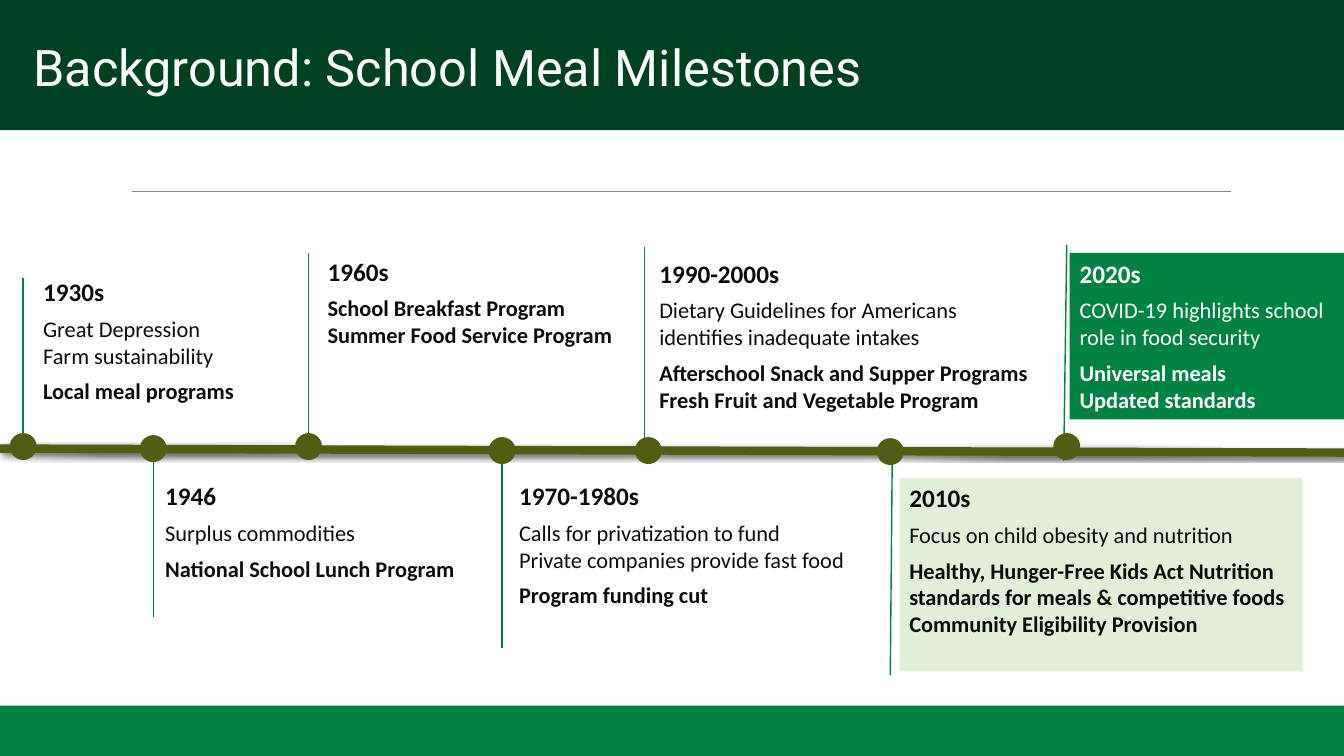
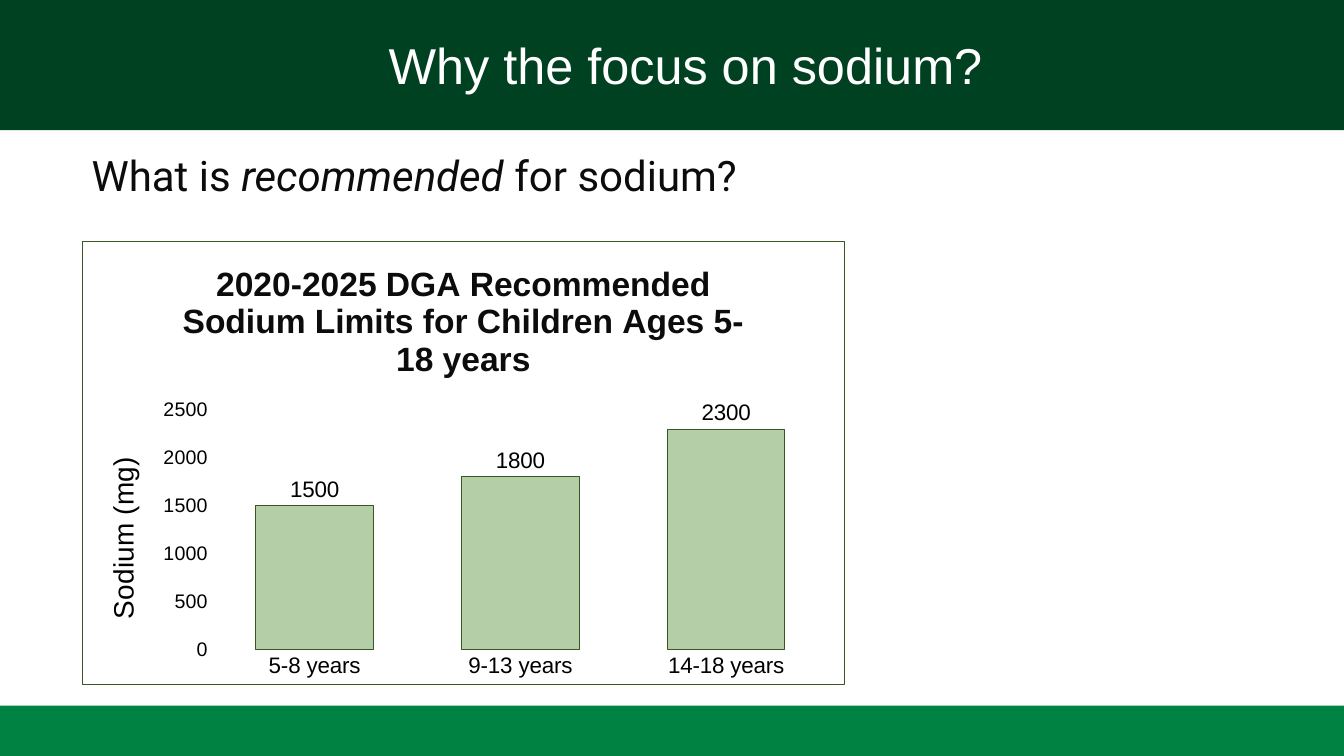
from dataclasses import dataclass

from lxml.etree import SubElement
from pptx import Presentation
from pptx.chart.data import CategoryChartData
from pptx.dml.color import RGBColor
from pptx.enum.chart import XL_CHART_TYPE, XL_LABEL_POSITION, XL_TICK_MARK
from pptx.enum.shapes import MSO_CONNECTOR, MSO_SHAPE
from pptx.enum.text import MSO_ANCHOR, MSO_AUTO_SIZE, PP_ALIGN
from pptx.oxml import parse_xml
from pptx.oxml.ns import nsdecls, qn
from pptx.util import Inches, Pt

GREEN, DARK_GREEN, PALE_GREEN, OLIVE = "008342", "004121", "E1EFD8", "535C13"
BAR, BAR_EDGE, GREY = "B4CFA8", "385723", "858585"
INK, BLACK, WHITE = "0C0C0C", "000000", "FFFFFF"
DOT = 0.25


@dataclass(frozen=True)
class Line:
    """A line of milestone text."""

    text: str
    bold: bool = False
    gap: int = 0


@dataclass(frozen=True)
class Milestone:
    """A dot on the timeline with its stem and text box."""

    period: str
    dot: tuple[float, float]
    stem: tuple[float, float, float, float]
    box: tuple[float, float, float, float]
    lines: tuple[Line, ...]
    fill: str = ""
    ink: str = INK


MILESTONES = (
    Milestone("1930s", (0.23, 4.43), (0.23, 2.76, 0.23, 4.43), (0.33, 2.69, 2.27, 1.38),
              (Line("Great Depression", gap=6), Line("Farm sustainability"),
               Line("Local meal programs", True, 6))),
    Milestone("1946", (1.52, 4.45), (1.52, 4.49, 1.52, 6.12), (1.54, 4.72, 3.57, 1.11),
              (Line("Surplus commodities", gap=6),
               Line("National School Lunch Program", True, 6))),
    Milestone("1960s", (3.06, 4.43), (3.06, 2.51, 3.06, 4.45), (3.15, 2.49, 3.39, 1.03),
              (Line("School Breakfast Program", True, 6),
               Line("Summer Food Service Program", True))),
    Milestone("1970-1980s", (4.98, 4.47), (4.98, 4.49, 4.98, 6.43), (5.05, 4.72, 3.87, 1.38),
              (Line("Calls for privatization to fund", gap=6),
               Line("Private companies provide fast food"),
               Line("Program funding cut", True, 6))),
    Milestone("1990-2000s", (6.43, 4.47), (6.39, 2.45, 6.39, 4.42), (6.44, 2.51, 4.02, 1.65),
              (Line("Dietary Guidelines for Americans identifies inadequate intakes", gap=6),
               Line("Afterschool Snack and Supper Programs", True, 6),
               Line("Fresh Fruit and Vegetable Program", True))),
    Milestone("2010s", (8.83, 4.48), (8.85, 4.46, 8.83, 6.7), (8.92, 4.74, 4, 1.92),
              (Line("Focus on child obesity and nutrition", gap=6),
               Line("Healthy, Hunger-Free Kids Act Nutrition standards for meals "
                    "& competitive foods", True, 6),
               Line("Community Eligibility Provision", True)), PALE_GREEN),
    Milestone("2020s", (10.58, 4.43), (10.58, 2.43, 10.55, 4.57), (10.61, 2.51, 2.74, 1.65),
              (Line("COVID-19 highlights school role in food security", gap=6),
               Line("Universal meals", True, 6), Line("Updated standards", True)),
              GREEN, WHITE),
)


def color(value: str) -> RGBColor:
    """Turn a hex string into a colour."""
    return RGBColor.from_string(value)


def style_font(font, name: str, size: float, ink: str, bold: bool = False) -> None:
    """Set the look of a font."""
    font.name, font.size, font.bold = name, Pt(size), bold
    font.color.rgb = color(ink)


def add_span(para, text: str, name: str, size: float, ink: str, bold: bool = False):
    """Add one formatted run to a paragraph."""
    span = para.add_run()
    span.text = text
    style_font(span.font, name, size, ink, bold)
    return span


def add_solid(page, shape: MSO_SHAPE, area: tuple[float, ...], fill: str):
    """Add a flat filled shape."""
    solid = page.shapes.add_shape(shape, *map(Inches, area))
    solid.shadow.inherit = False
    solid.fill.solid()
    solid.fill.fore_color.rgb = color(fill)
    solid.line.fill.background()
    return solid


def add_line(page, ends: tuple[float, ...], ink: str, width: float, shadow: bool = False) -> None:
    """Add a straight line, with a soft shadow on request."""
    line = page.shapes.add_connector(MSO_CONNECTOR.STRAIGHT, *map(Inches, ends))
    line.line.color.rgb = color(ink)
    line.line.width = Pt(width)
    effects = SubElement(line._element.spPr, qn("a:effectLst"))
    if shadow:
        outer = SubElement(effects, qn("a:outerShdw"), blurRad=str(Pt(3)), dist=str(Pt(2)),
                           dir="2700000", rotWithShape="0")
        tint = SubElement(outer, qn("a:srgbClr"), val=BLACK)
        SubElement(tint, qn("a:alpha"), val="60000")


def add_text_box(page, area: tuple[float, ...]):
    """Add a wrapping text box of fixed size."""
    box = page.shapes.add_textbox(*map(Inches, area))
    box.text_frame.word_wrap = True
    box.text_frame.auto_size = MSO_AUTO_SIZE.NONE
    return box


def add_bands(page) -> None:
    """Place the top and bottom bands on the layout of a page."""
    layout = page.slide_layout
    for holder in list(layout.placeholders)[1:]:
        holder._element.getparent().remove(holder._element)
    for area, fill in (((0, 7, 13.33, 0.5), GREEN), ((-0.02, 0, 13.35, 1.29), DARK_GREEN)):
        band = add_solid(page, MSO_SHAPE.RECTANGLE, area, fill)
        layout.shapes._spTree.insert(2, band._element)


def set_title(page, text: str, font: str, left: float, top: float, align: PP_ALIGN) -> None:
    """Fill and place the title of a page."""
    title = page.shapes.title
    title.left, title.top, title.width, title.height = map(Inches, (left, top, 12.82, 0.69))
    frame = title.text_frame
    frame.auto_size, frame.vertical_anchor = MSO_AUTO_SIZE.NONE, MSO_ANCHOR.BOTTOM
    para = frame.paragraphs[0]
    para.alignment, para.line_spacing = align, 0.85
    add_span(para, text, font, 36, WHITE)


def add_milestone_text(page, milestone: Milestone) -> None:
    """Add the text box of a milestone."""
    box = add_text_box(page, milestone.box)
    if milestone.fill:
        box.fill.solid()
        box.fill.fore_color.rgb = color(milestone.fill)
    add_span(box.text_frame.paragraphs[0], milestone.period, "Calibri", 18, milestone.ink, True)
    for line in milestone.lines:
        para = box.text_frame.add_paragraph()
        para.space_before = Pt(line.gap)
        add_span(para, line.text, "Calibri", 16, milestone.ink, line.bold)


def build_timeline(page) -> None:
    """Draw the school meal timeline."""
    set_title(page, "Background: School Meal Milestones", "Roboto", 0.23, 0.32, PP_ALIGN.LEFT)
    add_line(page, (1.31, 1.9, 12.21, 1.9), GREY, 0.75)
    for milestone in MILESTONES:
        add_line(page, milestone.stem, GREEN, 1)
    add_line(page, (0, 4.45, 13.33, 4.49), OLIVE, 6, shadow=True)
    for milestone in MILESTONES:
        x, y = milestone.dot
        dot = add_solid(page, MSO_SHAPE.OVAL, (x - DOT / 2, y - DOT / 2, DOT, DOT), OLIVE)
        dot.line.color.rgb = color(OLIVE)
        dot.line.width = Pt(1.25)
        add_milestone_text(page, milestone)


def add_sodium_chart(page) -> None:
    """Add the column chart of sodium limits."""
    data = CategoryChartData()
    data.categories = ["5-8 years", "9-13 years", "14-18 years"]
    data.add_series("Series 1", (1500, 1800, 2300))
    area = map(Inches, (0.81, 2.39, 7.57, 4.41))
    chart = page.shapes.add_chart(XL_CHART_TYPE.COLUMN_CLUSTERED, *area, data).chart
    style_font(chart.font, "Arial", 10, INK)
    chart.has_legend = False
    chart.has_title = True
    add_span(chart.chart_title.text_frame.paragraphs[0],
             "2020-2025 DGA Recommended Sodium Limits for Children Ages 5-18 years",
             "Arial", 24, INK, True)
    chart.chart_title.include_in_layout = False

    values = chart.value_axis
    values.minimum_scale, values.maximum_scale, values.major_unit = 0, 2500, 500
    values.has_major_gridlines = False
    add_span(values.axis_title.text_frame.paragraphs[0], "Sodium (mg)", "Arial", 20, BLACK)
    for axis, size in ((chart.category_axis, 16), (values, 14)):
        axis.major_tick_mark = axis.minor_tick_mark = XL_TICK_MARK.NONE
        axis.format.line.fill.background()
        style_font(axis.tick_labels.font, "Arial", size, BLACK)

    plot = chart.plots[0]
    plot.gap_width, plot.vary_by_categories = 75, False
    plot.has_data_labels = True
    labels = plot.data_labels
    labels.show_value, labels.position = True, XL_LABEL_POSITION.OUTSIDE_END
    style_font(labels.font, "Arial", 16, BLACK)
    bars = plot.series[0].format
    bars.fill.solid()
    bars.fill.fore_color.rgb = color(BAR)
    bars.line.color.rgb = color(BAR_EDGE)
    bars.line.width = Pt(0.75)
    frame_chart(chart)


def frame_chart(chart) -> None:
    """Outline the chart and fix the place of its plot area."""
    root = chart._chartSpace
    root.find(qn("c:chart")).addnext(parse_xml(
        f'<c:spPr {nsdecls("c", "a")}><a:noFill/><a:ln w="{Pt(0.75)}"><a:solidFill>'
        f'<a:srgbClr val="{BAR_EDGE}"/></a:solidFill></a:ln></c:spPr>'))
    plot_area = root.find(".//" + qn("c:plotArea"))
    for old in plot_area.findall(qn("c:layout")):
        plot_area.remove(old)
    layout = parse_xml(f'<c:layout {nsdecls("c")}/>')
    manual = SubElement(layout, qn("c:manualLayout"))
    for tag, value in (("layoutTarget", "inner"), ("xMode", "edge"), ("yMode", "edge"),
                       ("x", "0.17"), ("y", "0.38"), ("w", "0.81"), ("h", "0.54")):
        SubElement(manual, qn(f"c:{tag}"), val=value)
    plot_area.insert(0, layout)


def build_sodium(page) -> None:
    """Draw the sodium question and its chart."""
    set_title(page, "Why the focus on sodium?", "Arial", 0.39, 0.3, PP_ALIGN.CENTER)
    box = add_text_box(page, (0.81, 0.89, 11.71, 1.14))
    box.text_frame.vertical_anchor = MSO_ANCHOR.BOTTOM
    para = box.text_frame.paragraphs[0]
    para.line_spacing = 0.85
    for text, italic in (("What is ", False), ("recommended", True), (" for sodium?", False)):
        add_span(para, text, "Roboto", 30, INK).font.italic = italic
    add_sodium_chart(page)


def main() -> None:
    """Build and save the deck."""
    deck = Presentation()
    deck.slide_width, deck.slide_height = Inches(13.33), Inches(7.5)
    layout = deck.slide_layouts[5]
    pages = [deck.slides.add_slide(layout) for _ in range(2)]
    add_bands(pages[0])
    build_timeline(pages[0])
    build_sodium(pages[1])
    deck.save("out.pptx")


if __name__ == "__main__":
    main()
